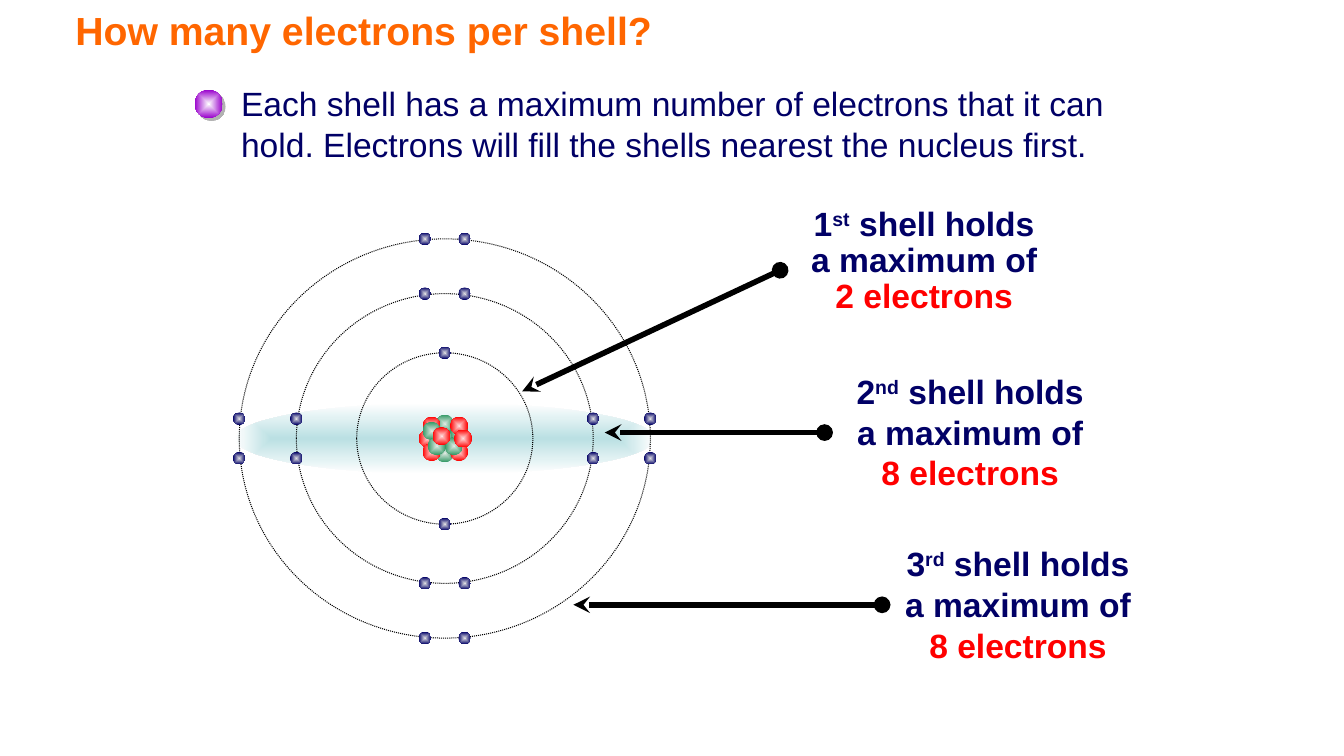
from lxml.etree import SubElement
from pptx import Presentation
from pptx.dml.color import RGBColor
from pptx.enum.dml import MSO_LINE
from pptx.enum.shapes import MSO_CONNECTOR, MSO_SHAPE
from pptx.enum.text import MSO_ANCHOR, MSO_AUTO_SIZE, PP_ALIGN
from pptx.oxml.ns import qn
from pptx.util import Cm, Pt

WHITE = RGBColor(0xFF, 0xFF, 0xFF)
BLACK = RGBColor(0x00, 0x00, 0x00)
NAVY = RGBColor(0x01, 0x00, 0x66)
ORANGE = RGBColor(0xFF, 0x66, 0x00)
RED = RGBColor(0xFF, 0x00, 0x00)
PINK = RGBColor(0xFF, 0xDE, 0xDE)
GREEN = RGBColor(0x33, 0x99, 0x66)
PALE_GREEN = RGBColor(0xDF, 0xE9, 0xE2)
PALE_NAVY = RGBColor(0xDE, 0xDE, 0xE2)
AQUA = RGBColor(0xBB, 0xE0, 0xE3)
PURPLE = RGBColor(0x99, 0x00, 0xCC)
SHADOW = "B2B2B2"

TITLE = "How many electrons per shell?"
BODY = ("Each shell has a maximum number of electrons that it can hold. "
        "Electrons will fill the shells nearest the nucleus first.")

CENTRE_X, CENTRE_Y = 11.21, 11.05
ELECTRON_SIZE, PAIR_OFFSET = 0.31, 0.5
NUCLEON_SIZE = 0.45
SHELLS = [(3.74, 3.65, 8), (5.18, 5.03, 8), (2.22, 2.16, 2)]
PROTON, NEUTRON = (PINK, RED), (PALE_GREEN, GREEN)
NUCLEONS = [
    (0, -0.37, NEUTRON), (-0.43, 0, PROTON), (0, 0, NEUTRON),
    (-0.33, -0.32, PROTON), (-0.33, -0.19, NEUTRON), (0, 0.37, NEUTRON),
    (-0.33, 0.34, PROTON), (0.36, 0.34, PROTON), (0.23, 0.19, NEUTRON),
    (0.36, -0.19, NEUTRON), (0.36, -0.32, PROTON), (-0.2, 0.19, NEUTRON),
    (-0.08, -0.06, PROTON), (0.46, 0, PROTON),
]
CALLOUTS = [
    ("3", "rd", "8 electrons", (22.23, 15.24, 14.45, 15.24), (22.38, 13.56, 6.55, 3.33), 29),
    ("2", "nd", "8 electrons", (20.78, 10.9, 15.24, 10.9), (20.88, 9.22, 7.14, 3.33), 29),
    ("1", "st", "2 electrons", (19.66, 6.81, 13.16, 9.86), (19.76, 5.08, 7.06, 3.02), 26),
]


def place(shape, left, top, width, height):
    shape.left, shape.top = Cm(left), Cm(top)
    shape.width, shape.height = Cm(width), Cm(height)


def set_font(paragraph, size, color, bold=False):
    font = paragraph.font
    font.name, font.size, font.bold = "Arial", Pt(size), bold
    font.color.rgb = color


def add_ellipse(slide, x, y, width, height):
    """Add an ellipse centred on x, y."""
    ellipse = slide.shapes.add_shape(
        MSO_SHAPE.OVAL, Cm(x - width / 2), Cm(y - height / 2), Cm(width), Cm(height))
    ellipse.shadow.inherit = False
    return ellipse


def add_sphere(slide, x, y, width, height, inner, outer):
    """Add a borderless ellipse shaded from its centre outwards."""
    sphere = add_ellipse(slide, x, y, width, height)
    sphere.line.fill.background()
    sphere.fill.gradient()
    for stop, color in zip(sphere.fill.gradient_stops, (inner, outer)):
        stop.color.rgb = color
    gradient = sphere._element.spPr.find(qn("a:gradFill"))
    gradient.remove(gradient.find(qn("a:lin")))
    shading = SubElement(gradient, qn("a:path"), {"path": "shape"})
    SubElement(shading, qn("a:fillToRect"), dict.fromkeys("ltrb", "50000"))
    return sphere


def add_atom(slide):
    """Draw the halo, nucleus, shells and electrons."""
    add_sphere(slide, CENTRE_X, CENTRE_Y, 10.57, 1.8, AQUA, WHITE)
    for dx, dy, colors in NUCLEONS:
        add_sphere(slide, CENTRE_X + dx, CENTRE_Y + dy, NUCLEON_SIZE, NUCLEON_SIZE, *colors)
    for radius_x, radius_y, count in SHELLS:
        ring = add_ellipse(slide, CENTRE_X, CENTRE_Y, 2 * radius_x, 2 * radius_y)
        ring.fill.background()
        ring.line.color.rgb = BLACK
        ring.line.width = Pt(0.75)
        ring.line.dash_style = MSO_LINE.ROUND_DOT
        if count == 2:
            offsets = [(0, -radius_y), (0, radius_y)]
        else:
            pair = (-PAIR_OFFSET, PAIR_OFFSET)
            offsets = [(dx, dy) for dx in pair for dy in (-radius_y, radius_y)]
            offsets += [(dx, dy) for dx in (-radius_x, radius_x) for dy in pair]
        for dx, dy in offsets:
            add_sphere(slide, CENTRE_X + dx, CENTRE_Y + dy,
                       ELECTRON_SIZE, ELECTRON_SIZE, PALE_NAVY, NAVY)


def add_callout(slide, number, suffix, electrons, ends, box, spacing):
    """Add one arrow and the label at its tail."""
    arrow = slide.shapes.add_connector(MSO_CONNECTOR.STRAIGHT, *map(Cm, ends))
    arrow.line.color.rgb = BLACK
    arrow.line.width = Pt(4)
    line = arrow.line._get_or_add_ln()
    SubElement(line, qn("a:headEnd"), {"type": "oval"})
    SubElement(line, qn("a:tailEnd"), {"type": "stealth"})
    SubElement(arrow._element.spPr, qn("a:effectLst"))

    frame = slide.shapes.add_textbox(*map(Cm, box)).text_frame
    frame.word_wrap = True
    paragraph = frame.paragraphs[0]
    paragraph.alignment = PP_ALIGN.CENTER
    paragraph.line_spacing = Pt(spacing)
    set_font(paragraph, 24, NAVY, bold=True)
    paragraph.add_run().text = number
    ordinal = paragraph.add_run()
    ordinal.text = suffix
    ordinal._r.get_or_add_rPr().set("baseline", "30000")
    for text in (" shell holds", "a maximum of"):
        paragraph.add_run().text = text
        paragraph.add_line_break()
    limit = paragraph.add_run()
    limit.text = electrons
    limit.font.color.rgb = RED


def add_title(slide):
    title = slide.shapes.title
    place(title, 0, 0, 29.21, 1.52)
    frame = title.text_frame
    frame.text = TITLE
    frame.margin_left = Cm(1.9)
    frame.vertical_anchor = MSO_ANCHOR.MIDDLE
    frame.auto_size = MSO_AUTO_SIZE.NONE
    paragraph = frame.paragraphs[0]
    paragraph.alignment = PP_ALIGN.LEFT
    set_font(paragraph, 28, ORANGE, bold=True)


def add_body(slide):
    body = slide.placeholders[1]
    place(body, 5.82, 1.96, 22.63, 3.33)
    frame = body.text_frame
    frame.text = BODY
    frame.auto_size = MSO_AUTO_SIZE.NONE
    paragraph = frame.paragraphs[0]
    paragraph.space_before = Pt(0)
    paragraph.line_spacing = Pt(29)
    set_font(paragraph, 24, NAVY)
    properties = paragraph._p.get_or_add_pPr()
    properties.set("marL", "0")
    properties.set("indent", "0")
    properties.find(qn("a:defRPr")).addprevious(properties.makeelement(qn("a:buNone")))

    bullet = add_sphere(slide, 5.26, 2.62, 0.71, 0.71, WHITE, PURPLE)
    effects = bullet._element.spPr.find(qn("a:effectLst"))
    shadow = SubElement(effects, qn("a:outerShdw"), {
        "dist": str(Pt(2.8)), "dir": "2700000", "algn": "ctr", "rotWithShape": "0"})
    SubElement(shadow, qn("a:srgbClr"), {"val": SHADOW})


def main():
    presentation = Presentation()
    presentation.slide_width, presentation.slide_height = Cm(33.87), Cm(19.05)
    slide = presentation.slides.add_slide(presentation.slide_layouts[1])
    add_title(slide)
    add_body(slide)
    add_atom(slide)
    for callout in CALLOUTS:
        add_callout(slide, *callout)
    presentation.save("out.pptx")


if __name__ == "__main__":
    main()
